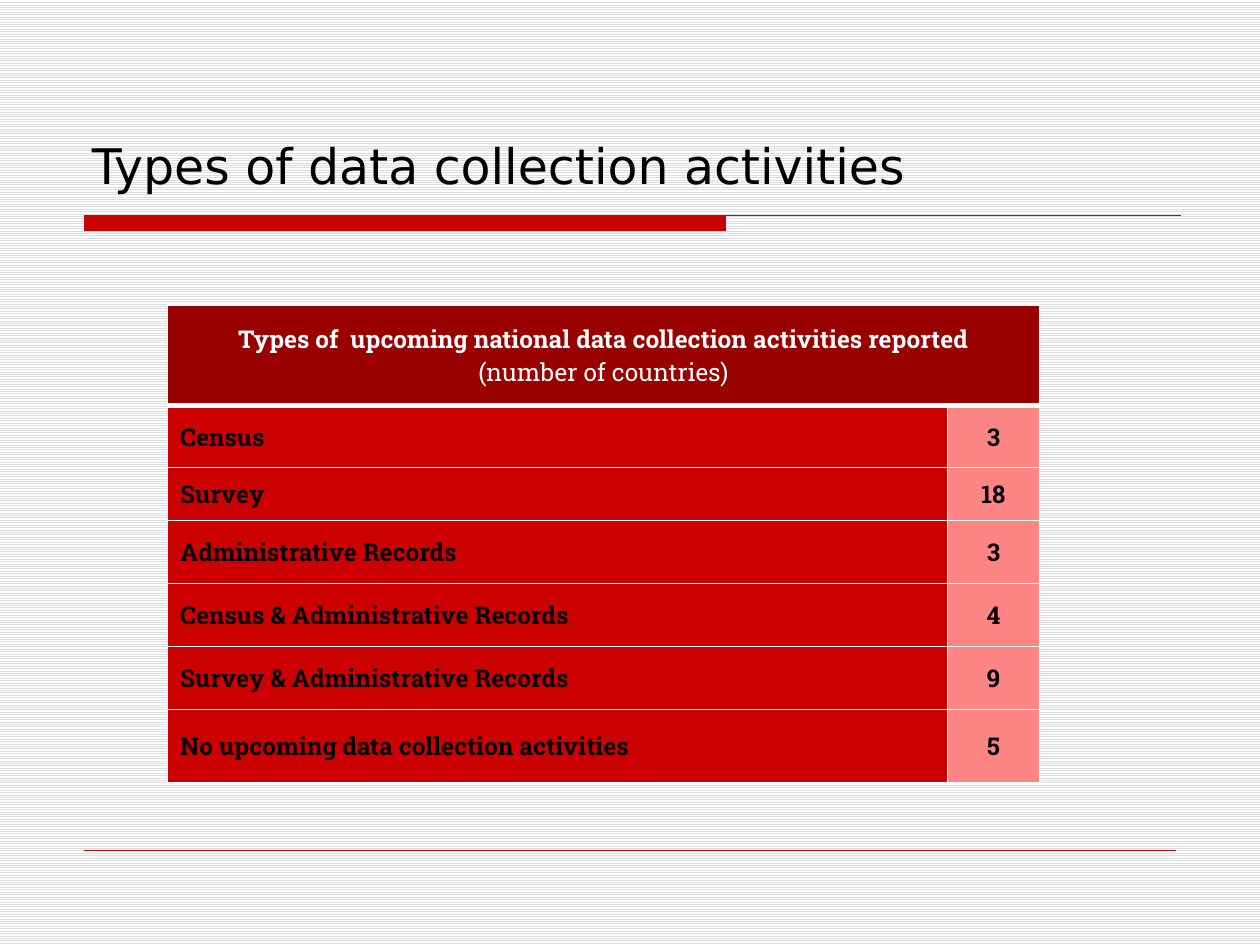
from copy import deepcopy
from dataclasses import dataclass

from lxml.etree import SubElement
from pptx import Presentation
from pptx.dml.color import RGBColor
from pptx.enum.dml import MSO_PATTERN
from pptx.enum.shapes import MSO_CONNECTOR
from pptx.enum.text import MSO_ANCHOR, PP_ALIGN
from pptx.oxml.ns import qn
from pptx.slide import Slide
from pptx.table import _Cell
from pptx.text.text import _Paragraph
from pptx.util import Inches, Pt

COLORS = {
    "black": "000000",
    "white": "FFFFFF",
    "stripe": "DDDDDD",
    "red": "CC0000",
    "dark_red": "990000",
    "pink": "FF8585",
}
TITLE_FONT = "DejaVu Sans"
TABLE_FONT = "Roboto Slab"
COLUMN_WIDTHS = (6.19, 0.73)
HEADER_HEIGHT = 0.8


@dataclass(frozen=True)
class Activity:
    label: str
    countries: int
    height: float = 0.5


ACTIVITIES = (
    Activity("Census", 3, 0.49),
    Activity("Survey", 18, 0.42),
    Activity("Administrative Records", 3),
    Activity("Census & Administrative Records", 4),
    Activity("Survey & Administrative Records", 9),
    Activity("No upcoming data collection activities", 5, 0.58),
)


def color(name: str) -> RGBColor:
    return RGBColor.from_string(COLORS[name])


def format_paragraph(para: _Paragraph, font: str, size: float, ink: str,
                     align: PP_ALIGN, bold: bool = False) -> None:
    para.alignment = align
    for span in para.runs:
        span.font.name = font
        span.font.size = Pt(size)
        span.font.bold = bold
        span.font.color.rgb = color(ink)


def set_borders(cell: _Cell, bottom_width: float = 1, top_width: float = 1) -> None:
    properties = cell._tc.get_or_add_tcPr()
    widths = {"a:lnL": 1, "a:lnR": 1, "a:lnT": top_width, "a:lnB": bottom_width}
    for position, (tag, width) in enumerate(widths.items()):
        border = SubElement(properties, qn(tag), w=str(Pt(width)))
        fill = SubElement(border, qn("a:solidFill"))
        SubElement(fill, qn("a:srgbClr"), val=COLORS["white"])
        properties.insert(position, border)


def fill_cell(cell: _Cell, text: str, fill: str, ink: str, align: PP_ALIGN) -> None:
    cell.fill.solid()
    cell.fill.fore_color.rgb = color(fill)
    cell.vertical_anchor = MSO_ANCHOR.MIDDLE
    cell.text_frame.text = text
    for para in cell.text_frame.paragraphs:
        format_paragraph(para, TABLE_FONT, 14, ink, align, bold=True)


def set_background(page: Slide) -> None:
    fill = page.background.fill
    fill.patterned()
    fill.pattern = MSO_PATTERN.LIGHT_HORIZONTAL
    fill.fore_color.rgb = color("stripe")
    fill.back_color.rgb = color("white")


def add_title_rule(page: Slide) -> None:
    left, bar_right, right, top, bottom = map(Inches, (0.67, 5.76, 9.37, 1.71, 1.83))
    builder = page.shapes.build_freeform(left, top)
    builder.add_line_segments([(bar_right, top), (bar_right, bottom), (left, bottom)])
    builder.move_to(left, top)
    builder.add_line_segments([(right, top)], close=False)
    rule = builder.convert_to_shape()
    rule.shadow.inherit = False
    rule.fill.solid()
    rule.fill.fore_color.rgb = color("red")
    rule.line.color.rgb = color("red")
    rule.line.width = Pt(0.75)

    bar = rule._element.find(".//" + qn("a:path"))
    line = deepcopy(bar)
    bar.addnext(line)
    bar.set("stroke", "0")
    bar_steps = len(bar) - 2
    for step in list(bar)[bar_steps:]:
        bar.remove(step)
    for step in list(line)[:bar_steps]:
        line.remove(step)


def add_footer_line(page: Slide) -> None:
    line = page.shapes.add_connector(
        MSO_CONNECTOR.STRAIGHT, Inches(0.67), Inches(6.75), Inches(9.33), Inches(6.75))
    line.line.color.rgb = color("red")
    line.line.width = Pt(0.25)
    SubElement(line._element.spPr, qn("a:effectLst"))


def add_title(page: Slide) -> None:
    box = page.shapes.add_textbox(Inches(-0.67), Inches(0.42), Inches(9.25), Inches(1.17))
    frame = box.text_frame
    frame.word_wrap = True
    frame.vertical_anchor = MSO_ANCHOR.BOTTOM
    frame.text = "Types of data collection activities"
    format_paragraph(frame.paragraphs[0], TITLE_FONT, 28, "black", PP_ALIGN.CENTER)


def add_activity_table(page: Slide) -> None:
    heights = [HEADER_HEIGHT] + [activity.height for activity in ACTIVITIES]
    table = page.shapes.add_table(
        len(heights), len(COLUMN_WIDTHS), Inches(1.33), Inches(2.42),
        Inches(sum(COLUMN_WIDTHS)), Inches(sum(heights))).table
    for column, width in zip(table.columns, COLUMN_WIDTHS):
        column.width = Inches(width)
    for row, height in zip(table.rows, heights):
        row.height = Inches(height)

    header = table.cell(0, 0)
    header.merge(table.cell(0, 1))
    fill_cell(header, "Types of  upcoming national data collection activities reported\n"
              "(number of countries)", "dark_red", "white", PP_ALIGN.CENTER)
    header.text_frame.paragraphs[1].runs[0].font.bold = False

    for index, activity in enumerate(ACTIVITIES, start=1):
        fill_cell(table.cell(index, 0), activity.label, "red", "black", PP_ALIGN.LEFT)
        fill_cell(table.cell(index, 1), str(activity.countries), "pink", "black",
                  PP_ALIGN.CENTER)
    for index, row in enumerate(table.rows):
        for cell in row.cells:
            set_borders(cell, bottom_width=3 if index == 0 else 1,
                        top_width=3 if index == 1 else 1)


def main() -> None:
    deck = Presentation()
    deck.slide_width = Inches(10)
    deck.slide_height = Inches(7.5)
    page = deck.slides.add_slide(deck.slide_layouts[6])
    set_background(page)
    add_title_rule(page)
    add_footer_line(page)
    add_title(page)
    add_activity_table(page)
    deck.save("out.pptx")


if __name__ == "__main__":
    main()
